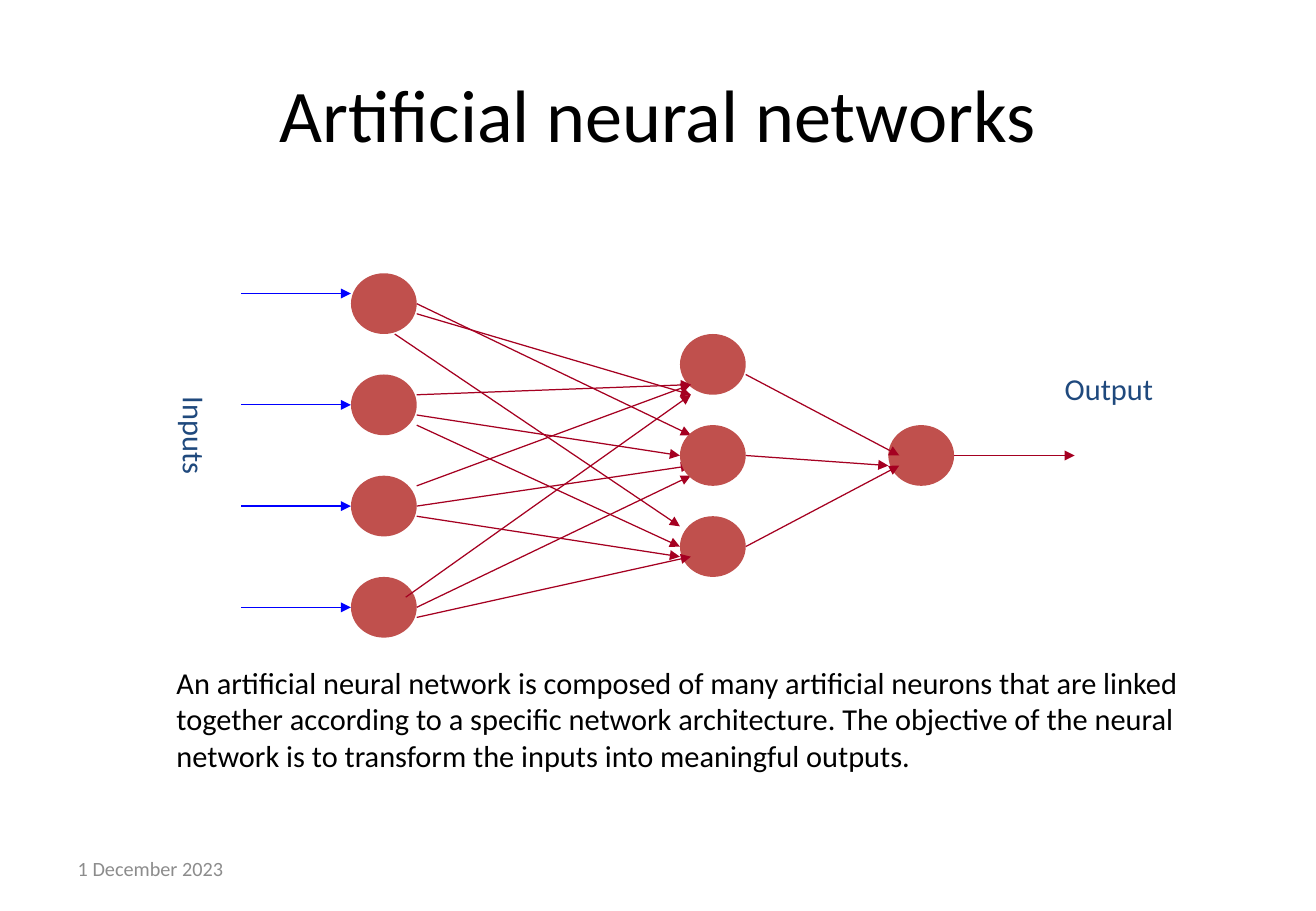
import dataclasses

import lxml.etree
import pptx
import pptx.dml.color
import pptx.enum.shapes
import pptx.enum.text
import pptx.oxml.ns
import pptx.util

ALIGN = pptx.enum.text.PP_ALIGN
ANCHOR = pptx.enum.text.MSO_ANCHOR


@dataclasses.dataclass(frozen=True)
class Theme:
    font: str = "Calibri"
    ink: str = "000000"
    muted: str = "8C8C8C"
    label: str = "1F497D"
    node: str = "C0504D"
    link: str = "A50021"
    feed: str = "0000FF"
    title: int = 44
    body: int = 18
    small: int = 12
    line: float = 0.75


THEME = Theme()
WIDTH, HEIGHT = pptx.util.Inches(10.83), pptx.util.Inches(7.5)
COLS, ROWS = 120, 90  # slide grid
NODE = 6  # node size in grid cells

# Top row of each node in a layer, and the layer's column
INPUTS = [(10, 10 * i) for i in range(4)]
HIDDEN = [(40, 6 + 9 * i) for i in range(3)]
OUTPUT = (59, 15)
FEEDS = [2, 13, 23, 33]  # rows of the input arrows

# Input, hidden node, shift from the right of one, shift from the left of the other
BACK = [
    (0, 1, (0, 0), (1, -2)),
    (1, 1, (0, 1), (0, 0)),
    (2, 1, (0, 0), (1, 1)),
    (3, 1, (0, 0), (1, 2)),
]
FRONT = [
    (0, 0, (0, 1), (1, 3)),
    (0, 2, (-2, 3), (0, -2)),
    (1, 0, (0, -1), (1, 2)),
    (1, 2, (0, 2), (0, 0)),
    (2, 0, (0, -2), (1, 2)),
    (2, 2, (0, 1), (0, 1)),
    (3, 0, (-1, -1), (1, 3)),
    (3, 2, (0, 1), (1, 1)),
]
# Shifts for each hidden node's arrow to the output node
MERGE = [((0, 1), (1, 0)), ((0, 0), (0, 1)), ((0, 0), (1, 1))]


def across(cols):
    return round(WIDTH * cols / COLS)


def down(rows):
    return round(HEIGHT * rows / ROWS)


def tint(code):
    return pptx.dml.color.RGBColor.from_string(code)


def write(slide, box, text, size, color, align=ALIGN.LEFT, anchor=ANCHOR.TOP, turn=False):
    left, top, wide, high = box
    shape = slide.shapes.add_textbox(across(left), down(top), across(wide), down(high))
    frame = shape.text_frame
    frame.word_wrap = True
    frame.vertical_anchor = anchor
    if turn:
        shape.element.txBody.bodyPr.set("vert", "eaVert")
    para = frame.paragraphs[0]
    para.text = text
    para.alignment = align
    para.font.name = THEME.font
    para.font.size = pptx.util.Pt(size)
    para.font.color.rgb = tint(color)


def draw_net(slide, box):
    left, top = box[:2]

    def node(spot):
        shape = slide.shapes.add_shape(
            pptx.enum.shapes.MSO_SHAPE.OVAL,
            across(left + spot[0]), down(top + spot[1]), across(NODE), down(NODE))
        shape.shadow.inherit = False
        shape.fill.solid()
        shape.fill.fore_color.rgb = tint(THEME.node)
        shape.line.fill.background()

    def arrow(start, end, color=THEME.link):
        line = slide.shapes.add_connector(
            pptx.enum.shapes.MSO_CONNECTOR.STRAIGHT,
            across(left + start[0]), down(top + start[1]),
            across(left + end[0]), down(top + end[1]))
        line.line.color.rgb = tint(color)
        line.line.width = pptx.util.Pt(THEME.line)
        tail = lxml.etree.SubElement(line.line._get_or_add_ln(), pptx.oxml.ns.qn("a:tailEnd"))
        tail.set("type", "triangle")
        lxml.etree.SubElement(line.element.spPr, pptx.oxml.ns.qn("a:effectLst"))

    def link(source, target, out, into):
        half = NODE / 2
        arrow((source[0] + NODE + out[0], source[1] + half + out[1]),
              (target[0] + into[0], target[1] + half + into[1]))

    # Input layer and the links behind the hidden layer
    for spot in INPUTS:
        node(spot)
    for i, j, out, into in BACK:
        link(INPUTS[i], HIDDEN[j], out, into)

    # Hidden layer and the links in front of it
    for spot in HIDDEN:
        node(spot)
    for i, j, out, into in FRONT:
        link(INPUTS[i], HIDDEN[j], out, into)

    # Output node
    node(OUTPUT)
    for spot, (out, into) in zip(HIDDEN, MERGE):
        link(spot, OUTPUT, out, into)

    # Arrows into and out of the network
    row = OUTPUT[1] + NODE / 2
    arrow((OUTPUT[0] + NODE, row), (box[2], row))
    for row in FEEDS:
        arrow((0, row), (INPUTS[0][0], row), THEME.feed)


def draw_slide(slide, box):
    left, top, wide, high = box

    # Title and date
    write(slide, (left + 6, top + 3.6, wide - 12, 15), "Artificial neural networks",
          THEME.title, THEME.ink, ALIGN.CENTER, ANCHOR.MIDDLE)
    write(slide, (left + 6, top + high - 6.6, 28, 4.8), "1 December 2023",
          THEME.small, THEME.muted, anchor=ANCHOR.MIDDLE)

    # Network and its labels
    draw_net(slide, (left + 22, top + 27, 76, 36))
    write(slide, (left + 14.4, top + 38, 5.6, 20), "Inputs",
          THEME.body, THEME.label, turn=True)
    write(slide, (left + 96, top + 36, 16, 4.8), "Output", THEME.body, THEME.label)

    # Summary
    write(slide, (left + 15, top + 65, 98, 12.1),
          "An artificial neural network is composed of many artificial neurons that are "
          "linked together according to a specific network architecture. The objective of "
          "the neural network is to transform the inputs into meaningful outputs.",
          THEME.body, THEME.ink)


def main():
    deck = pptx.Presentation()
    deck.slide_width, deck.slide_height = WIDTH, HEIGHT
    slide = deck.slides.add_slide(deck.slide_layouts[6])
    draw_slide(slide, (0, 0, COLS, ROWS))
    deck.save("out.pptx")


if __name__ == "__main__":
    main()
